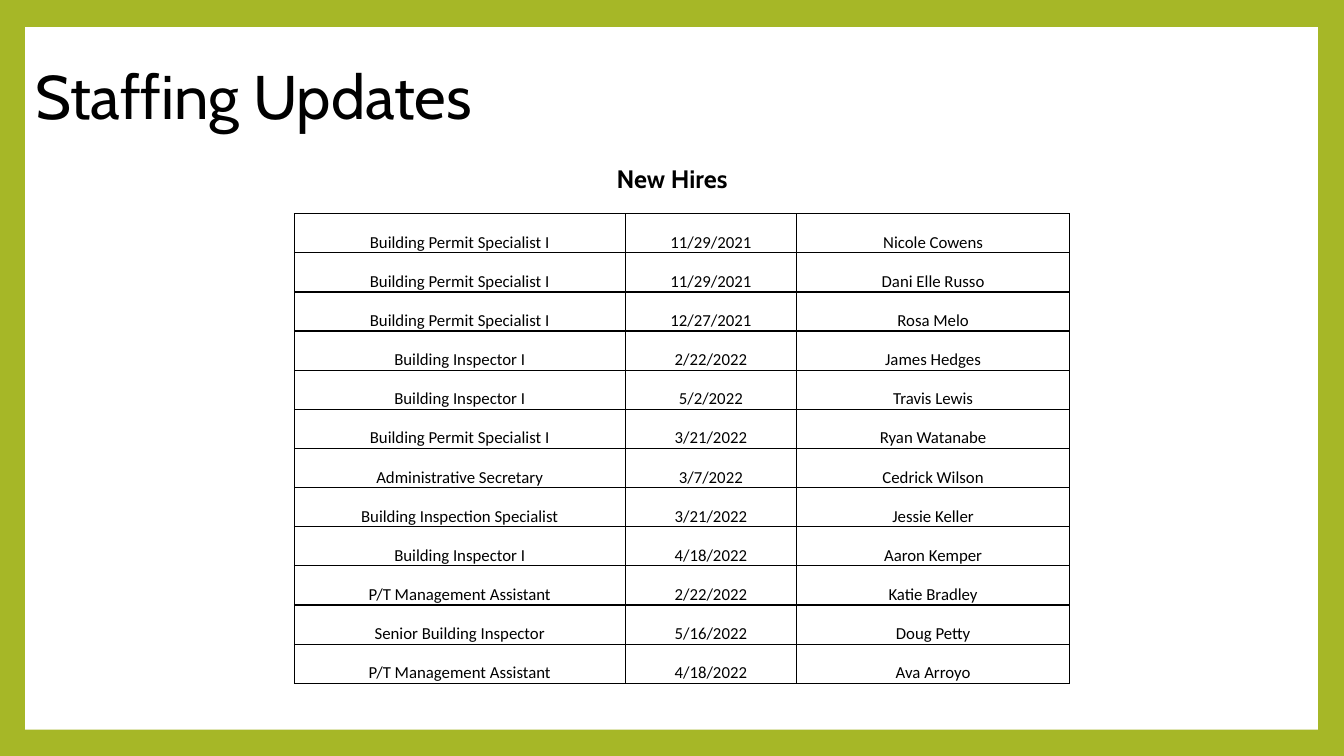
from lxml.etree import SubElement
from pptx import Presentation
from pptx.dml.color import RGBColor
from pptx.enum.shapes import MSO_SHAPE
from pptx.enum.text import MSO_ANCHOR, PP_ALIGN
from pptx.oxml.ns import qn
from pptx.util import Inches, Pt

GREEN = RGBColor(0xA6, 0xB7, 0x27)
WHITE = RGBColor(0xFF, 0xFF, 0xFF)
BLACK = RGBColor(0x00, 0x00, 0x00)

HIRES = [
    ("Building Permit Specialist I", "11/29/2021", "Nicole Cowens"),
    ("Building Permit Specialist I", "11/29/2021", "Dani Elle Russo"),
    ("Building Permit Specialist I", "12/27/2021", "Rosa Melo"),
    ("Building Inspector I", "2/22/2022", "James Hedges"),
    ("Building Inspector I", "5/2/2022", "Travis Lewis"),
    ("Building Permit Specialist I", "3/21/2022", "Ryan Watanabe"),
    ("Administrative Secretary", "3/7/2022", "Cedrick Wilson"),
    ("Building Inspection Specialist", "3/21/2022", "Jessie Keller"),
    ("Building Inspector I", "4/18/2022", "Aaron Kemper"),
    ("P/T Management Assistant", "2/22/2022", "Katie Bradley"),
    ("Senior Building Inspector", "5/16/2022", "Doug Petty"),
    ("P/T Management Assistant", "4/18/2022", "Ava Arroyo"),
]
COLUMN_WEIGHTS = (3.28, 1.7, 2.71)
DATE_COLUMN = 1


def inches(box):
    """Convert a left, top, width, height box to lengths."""
    return [Inches(length) for length in box]


def format_text(frame, font_name, size, align, bold=False):
    """Style the first paragraph of a text frame."""
    paragraph = frame.paragraphs[0]
    paragraph.alignment = align
    font = paragraph.runs[0].font
    font.name, font.size, font.bold = font_name, Pt(size), bold
    font.color.rgb = BLACK
    return paragraph


def add_panel(slide, box):
    """Lay the white panel over the green background."""
    slide.background.fill.solid()
    slide.background.fill.fore_color.rgb = GREEN
    panel = slide.shapes.add_shape(MSO_SHAPE.RECTANGLE, *inches(box))
    panel.shadow.inherit = False
    panel.fill.solid()
    panel.fill.fore_color.rgb = WHITE
    panel.line.fill.background()


def add_heading(slide, box, wording, size, align, bold=False):
    """Write one vertically centred heading in its box."""
    frame = slide.shapes.add_textbox(*inches(box)).text_frame
    frame.word_wrap = True
    frame.vertical_anchor = MSO_ANCHOR.MIDDLE
    frame.text = wording
    return format_text(frame, "Cabin", size, align, bold)


def add_borders(cell):
    """Draw a thin black line on each side of a cell."""
    properties = cell._tc.get_or_add_tcPr()
    for side in ("a:lnL", "a:lnR", "a:lnT", "a:lnB"):
        border = SubElement(properties, qn(side), w=str(Pt(1)))
        fill = SubElement(border, qn("a:solidFill"))
        SubElement(fill, qn("a:srgbClr"), val=str(BLACK))


def fill_cell(cell, wording, is_date):
    """Write and style one cell of the hires table."""
    cell.text = wording
    cell.vertical_anchor = MSO_ANCHOR.BOTTOM
    cell.margin_left = cell.margin_right = Inches(0.07)
    cell.margin_top = cell.margin_bottom = 0
    format_text(cell.text_frame, "Calibri", 12, PP_ALIGN.CENTER)
    add_borders(cell)
    if is_date:
        cell.fill.solid()
        cell.fill.fore_color.rgb = WHITE
    else:
        cell.fill.background()


def add_hires_table(slide, box):
    """Fill the box with equal rows and weighted columns of new hires."""
    left, top, width, height = inches(box)
    hires = slide.shapes.add_table(
        len(HIRES), len(COLUMN_WEIGHTS), left, top, width, height).table
    hires.first_row = hires.horz_banding = False
    for column, weight in zip(hires.columns, COLUMN_WEIGHTS):
        column.width = int(width * weight / sum(COLUMN_WEIGHTS))
    for row_index, hire in enumerate(HIRES):
        hires.rows[row_index].height = height // len(HIRES)
        for column_index, wording in enumerate(hire):
            fill_cell(hires.cell(row_index, column_index), wording,
                      column_index == DATE_COLUMN)


def build_staffing_slide(deck):
    """Compose the staffing updates slide."""
    slide = deck.slides.add_slide(deck.slide_layouts[6])
    add_panel(slide, (0.25, 0.27, 12.82, 6.97))
    title = add_heading(slide, (0.25, 0.25, 10.8, 1.48),
                        "Staffing Updates", 44, PP_ALIGN.LEFT)
    title.line_spacing = 0.9
    add_hires_table(slide, (2.92, 2.12, 7.69, 4.66))
    add_heading(slide, (5.19, 1.57, 2.95, 0.4),
                "New Hires", 18, PP_ALIGN.CENTER, bold=True)


def main():
    """Create and save the deck."""
    deck = Presentation()
    deck.slide_width, deck.slide_height = Inches(13.33), Inches(7.5)
    build_staffing_slide(deck)
    deck.save("out.pptx")


if __name__ == "__main__":
    main()
